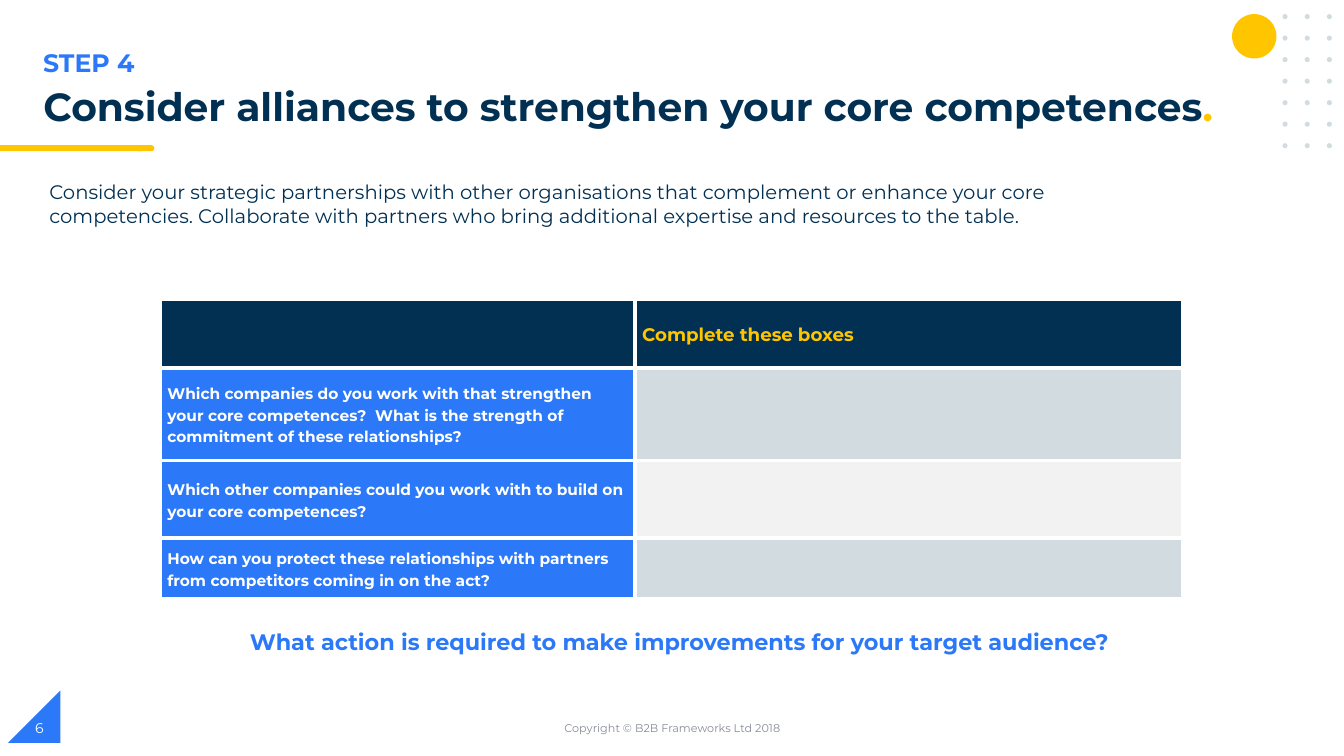
from lxml.etree import SubElement
from pptx import Presentation
from pptx.dml.color import RGBColor
from pptx.enum.shapes import MSO_SHAPE
from pptx.enum.text import MSO_ANCHOR, PP_ALIGN
from pptx.oxml.ns import qn
from pptx.util import Inches, Pt

NAVY = RGBColor(0x02, 0x30, 0x53)
BLUE = RGBColor(0x2B, 0x79, 0xF8)
YELLOW = RGBColor(0xFF, 0xC6, 0x00)
MIST = RGBColor(0xD1, 0xDB, 0xE0)
PALE = RGBColor(0xF2, 0xF2, 0xF2)
GREY = RGBColor(0x88, 0x8C, 0x97)
WHITE = RGBColor(0xFF, 0xFF, 0xFF)

deck = Presentation()
deck.slide_width, deck.slide_height = Inches(13.33), Inches(7.5)
page = deck.slides.add_slide(deck.slide_layouts[5])


def add_plain_shape(kind, color, left, top, width, height):
    shape = page.shapes.add_shape(
        kind, Inches(left), Inches(top), Inches(width), Inches(height))
    shape.shadow.inherit = False
    shape.fill.solid()
    shape.fill.fore_color.rgb = color
    shape.line.fill.background()
    return shape


def add_span(para, text, size, color, bold=False):
    span = para.add_run()
    span.text = text
    for name, value in {"name": "Montserrat", "size": Pt(size), "bold": bold}.items():
        setattr(span.font, name, value)
    span.font.color.rgb = color


# Corner triangle, title underline and yellow disc
triangle = add_plain_shape(MSO_SHAPE.RIGHT_TRIANGLE, BLUE, 0.08, 6.85, 0.52, 0.52)
triangle._element.spPr.find(qn("a:xfrm")).set("flipH", "1")
add_plain_shape(MSO_SHAPE.FLOWCHART_TERMINATOR, YELLOW, 1.34, 1.44, 0.19, 0.06)
add_plain_shape(MSO_SHAPE.RECTANGLE, YELLOW, 0, 1.44, 1.41, 0.06)
add_plain_shape(MSO_SHAPE.OVAL, YELLOW, 12.22, 0.14, 0.44, 0.44)

# Dot grid
for row in range(7):
    for column in range(3):
        add_plain_shape(MSO_SHAPE.OVAL, MIST,
                        12.72 + column * 0.22, 0.14 + row * 0.2135, 0.05, 0.05)

# Title
title = page.shapes.title
for name, value in {"left": 0.33, "top": 0.82, "width": 12.08, "height": 0.56}.items():
    setattr(title, name, Inches(value))
title.text_frame.word_wrap = True
title.text_frame.vertical_anchor = MSO_ANCHOR.TOP
para = title.text_frame.paragraphs[0]
para.alignment = PP_ALIGN.LEFT
para.line_spacing = 0.9
add_span(para, "Consider alliances to strengthen your core competences", 28, NAVY, True)
add_span(para, ".", 28, YELLOW, True)

# Text boxes: text, place, size, colour, bold, alignment, anchor
text_boxes = [
    ("STEP 4", (0.33, 0.42, 6.69, 0.4), 18, BLUE, True, PP_ALIGN.LEFT, MSO_ANCHOR.TOP),
    ("Consider your strategic partnerships with other organisations that complement "
     "or enhance your core competencies. Collaborate with partners who bring "
     "additional expertise and resources to the table.",
     (0.39, 1.74, 11.52, 0.57), 14, NAVY, False, PP_ALIGN.LEFT, MSO_ANCHOR.TOP),
    ("What action is required to make improvements for your target audience?",
     (2.38, 6.18, 9.14, 0.37), 16, BLUE, True, PP_ALIGN.LEFT, MSO_ANCHOR.TOP),
    ("Copyright © B2B Frameworks Ltd 2018",
     (4.42, 7.02, 4.5, 0.4), 8, GREY, False, PP_ALIGN.CENTER, MSO_ANCHOR.MIDDLE),
    ("6", (0.25, 7.02, 3, 0.4), 10, WHITE, False, PP_ALIGN.LEFT, MSO_ANCHOR.MIDDLE),
]
for text, place, size, color, bold, alignment, anchor in text_boxes:
    box = page.shapes.add_textbox(*[Inches(value) for value in place])
    box.text_frame.word_wrap = True
    box.text_frame.vertical_anchor = anchor
    para = box.text_frame.paragraphs[0]
    para.alignment = alignment
    add_span(para, text, size, color, bold)

# Question table: left text, right text, left fill, right fill, height
table_rows = [
    ("", "Complete these boxes", NAVY, NAVY, 0.68),
    ("Which companies do you work with that strengthen your core competences?  "
     "What is the strength of commitment of these relationships?",
     "", BLUE, MIST, 0.92),
    ("Which other companies could you work with to build on your core competences?",
     "", BLUE, PALE, 0.77),
    ("How can you protect these relationships with partners from competitors "
     "coming in on the act?", "", BLUE, MIST, 0.6),
]
table = page.shapes.add_table(len(table_rows), 2, Inches(1.59), Inches(2.97),
                              Inches(10.14), Inches(2.97)).table
table.horz_banding = False
table.columns[0].width, table.columns[1].width = Inches(4.71), Inches(5.43)
for row, (question, answer, left_fill, right_fill, height) in enumerate(table_rows):
    table.rows[row].height = Inches(height)
    for column, (text, fill) in enumerate([(question, left_fill), (answer, right_fill)]):
        cell = table.cell(row, column)
        cell.vertical_anchor = MSO_ANCHOR.MIDDLE
        cell.margin_left = cell.margin_right = Inches(0.07)
        cell.margin_top = cell.margin_bottom = 0
        # White borders come before the fill in the cell properties
        for side in ("a:lnL", "a:lnR", "a:lnT", "a:lnB"):
            border = SubElement(cell._tc.get_or_add_tcPr(), qn(side), w=str(Pt(3)))
            paint = SubElement(border, qn("a:solidFill"))
            SubElement(paint, qn("a:srgbClr"), val=str(WHITE))
        cell.fill.solid()
        cell.fill.fore_color.rgb = fill
        if text:
            para = cell.text_frame.paragraphs[0]
            para.line_spacing = 1.15
            size, color = (13, YELLOW) if row == 0 else (11, WHITE)
            add_span(para, text, size, color, True)

deck.save("out.pptx")
